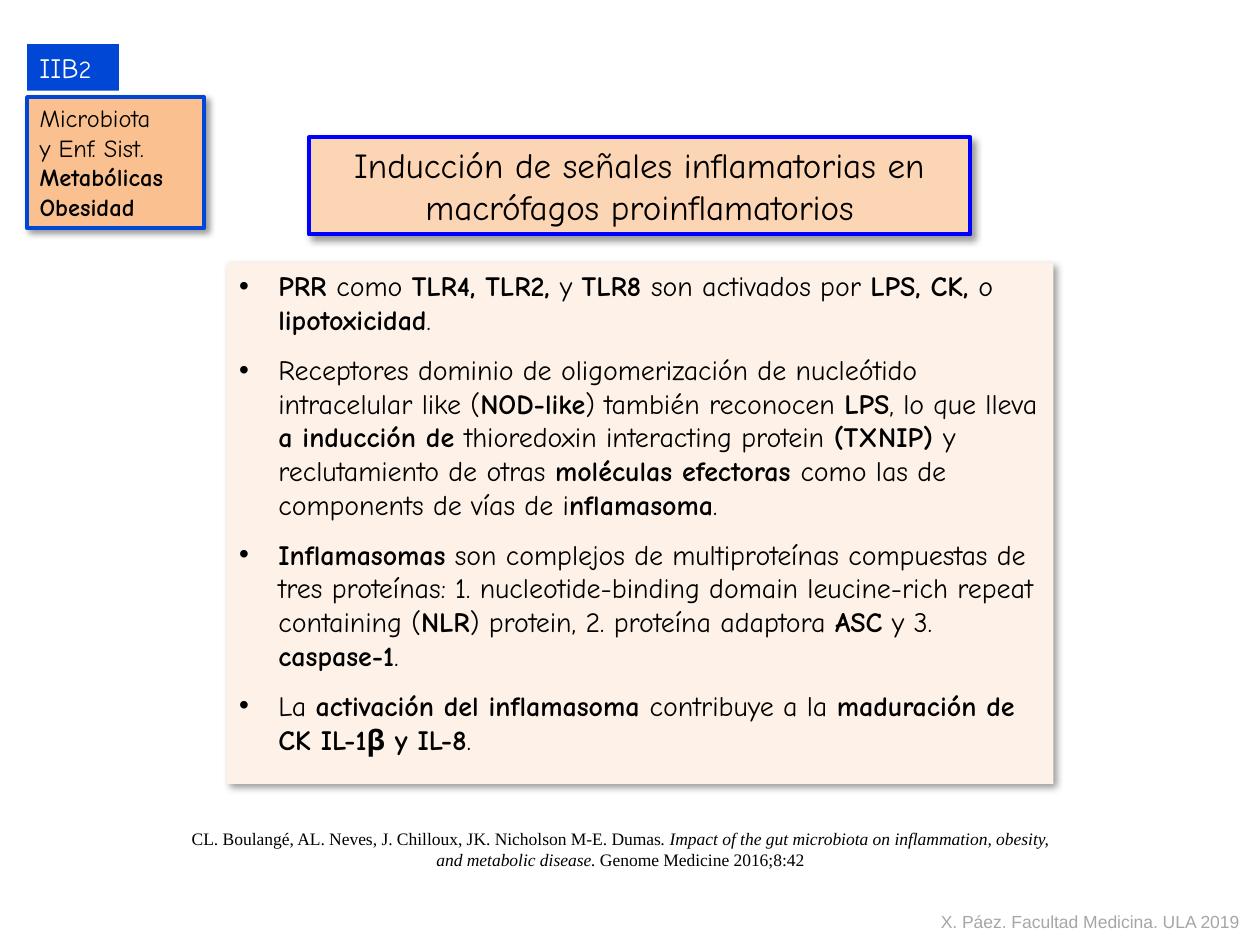
from lxml import etree
from pptx import Presentation
from pptx.dml.color import RGBColor
from pptx.enum import shapes, text
from pptx.oxml import ns
from pptx.util import Pt

BLACK = RGBColor(0, 0, 0)
WHITE = RGBColor(255, 255, 255)
GREY = RGBColor(0xA6, 0xA6, 0xA6)
BLUE = RGBColor(0, 0x47, 0xD6)
PURE = RGBColor(0, 0, 255)
CREAM = RGBColor(0xFE, 0xF2, 0xE8)
PEACH = RGBColor(0xFC, 0xD5, 0xB5)
ORANGE = RGBColor(0xFA, 0xC0, 0x90)
COMIC, TIMES, ARIAL = "Comic Neue", "Times New Roman", "Arial"

# Stretches between ** marks are emphasised.
TITLE = "Inducción de señales inflamatorias en macrófagos proinflamatorios"
BADGE = "IIB**2"
TOPIC = ["Microbiota", "y Enf. Sist.", "**Metabólicas", "**Obesidad"]
POINTS = [
    "**PRR **como **TLR4, TLR2, **y **TLR8 **son activados por **LPS, CK, **o "
    "**lipotoxicidad**.",
    "Receptores dominio de oligomerización de nucleótido intracelular like "
    "(**NOD-like**) también reconocen **LPS**, lo que lleva **a inducción de "
    "**thioredoxin interacting protein **(TXNIP) **y reclutamiento de otras "
    "**moléculas efectoras **como las de components de vías de "
    "i**nflamasoma**.",
    "**Inflamasomas** son complejos de multiproteínas compuestas de tres "
    "proteínas: 1. nucleotide-binding domain leucine-rich repeat containing "
    "(**NLR**) protein, 2. proteína adaptora **ASC** y 3. **caspase-1**.",
    "La **activación del inflamasoma **contribuye a la **maduración de "
    "CK IL-1β y IL-8**.",
]
SOURCE = ("CL. Boulangé, AL. Neves, J. Chilloux, JK. Nicholson M-E. Dumas**. "
          "Impact of the gut microbiota on inflammation, obesity, and "
          "metabolic disease. **Genome Medicine 2016;8:42")
CREDIT = "X. Páez. Facultad Medicina. ULA 2019"


def place(shape, left, top, width, height):
    shape.left, shape.top = Pt(left), Pt(top)
    shape.width, shape.height = Pt(width), Pt(height)


def paint(shape, fill, line=None, shadow=True):
    shape.shadow.inherit = False
    shape.fill.solid()
    shape.fill.fore_color.rgb = fill
    if line is None:
        shape.line.fill.background()
    else:
        shape.line.color.rgb = line
        shape.line.width = Pt(2.25)
    if shadow:
        effects = shape._element.spPr.find(ns.qn("a:effectLst"))
        outer = etree.SubElement(
            effects, ns.qn("a:outerShdw"), blurRad=str(Pt(4)),
            dist=str(Pt(3)), dir="2700000", algn="tl", rotWithShape="0")
        color = etree.SubElement(outer, ns.qn("a:srgbClr"), val="000000")
        etree.SubElement(color, ns.qn("a:alpha"), val="40000")


def bullet(para, indent=22.5):
    props = para._p.get_or_add_pPr()
    props.set("marL", str(Pt(indent)))
    props.set("indent", str(-Pt(indent)))
    etree.SubElement(props, ns.qn("a:buFont"), typeface="Arial")
    etree.SubElement(props, ns.qn("a:buChar"), char="•")


def write(shape, lines, font, size, color=BLACK, mark="bold",
          align=text.PP_ALIGN.LEFT, gap=0, dots=False, wrap=True):
    """Fill a shape, setting the font attribute named mark between ** marks."""
    frame = shape.text_frame
    frame.word_wrap = wrap
    frame.auto_size = text.MSO_AUTO_SIZE.NONE
    frame.vertical_anchor = text.MSO_ANCHOR.TOP
    for i, line in enumerate(lines):
        para = frame.add_paragraph() if i else frame.paragraphs[0]
        para.alignment = align
        para.space_before = Pt(gap if i else 0)
        if dots:
            bullet(para)
        for j, part in enumerate(line.split("**")):
            if not part:
                continue
            run = para.add_run()
            run.text = part
            run.font.name, run.font.size = font, Pt(size)
            run.font.color.rgb = color
            if mark:
                setattr(run.font, mark, j % 2 == 1)


deck = Presentation()
deck.slide_width, deck.slide_height = Pt(720), Pt(540)
slide = deck.slides.add_slide(deck.slide_layouts[5])


def panel(*box):
    shape = slide.shapes.add_shape(shapes.MSO_SHAPE.RECTANGLE, 0, 0, 0, 0)
    place(shape, *box)
    return shape


def label(*box):
    shape = slide.shapes.add_textbox(0, 0, 0, 0)
    place(shape, *box)
    return shape


MID = text.PP_ALIGN.CENTER

title = slide.shapes.title
place(title, 176.5, 78.5, 378, 55.5)
paint(title, PEACH, PURE)
write(title, [TITLE], COMIC, 20, align=MID)

body = panel(129.5, 150, 472.5, 298)
paint(body, CREAM)
write(body, POINTS, COMIC, 16, gap=9.6, dots=True)

badge = panel(15.5, 25.2, 52.5, 26.6)
paint(badge, BLUE, shadow=False)
write(badge, [BADGE], COMIC, 16, WHITE, mark=None)
badge.text_frame.paragraphs[0].runs[1].font.size = Pt(14)

topic = panel(15.5, 55.5, 101, 75)
paint(topic, ORANGE, BLUE)
write(topic, TOPIC, COMIC, 14)

source = label(98.5, 469.5, 512, 31.5)
write(source, [SOURCE], TIMES, 10, mark="italic", align=MID)

credit = label(530.5, 517, 186.5, 19.5)
write(credit, [CREDIT], ARIAL, 10, GREY, wrap=False)

deck.save("out.pptx")
